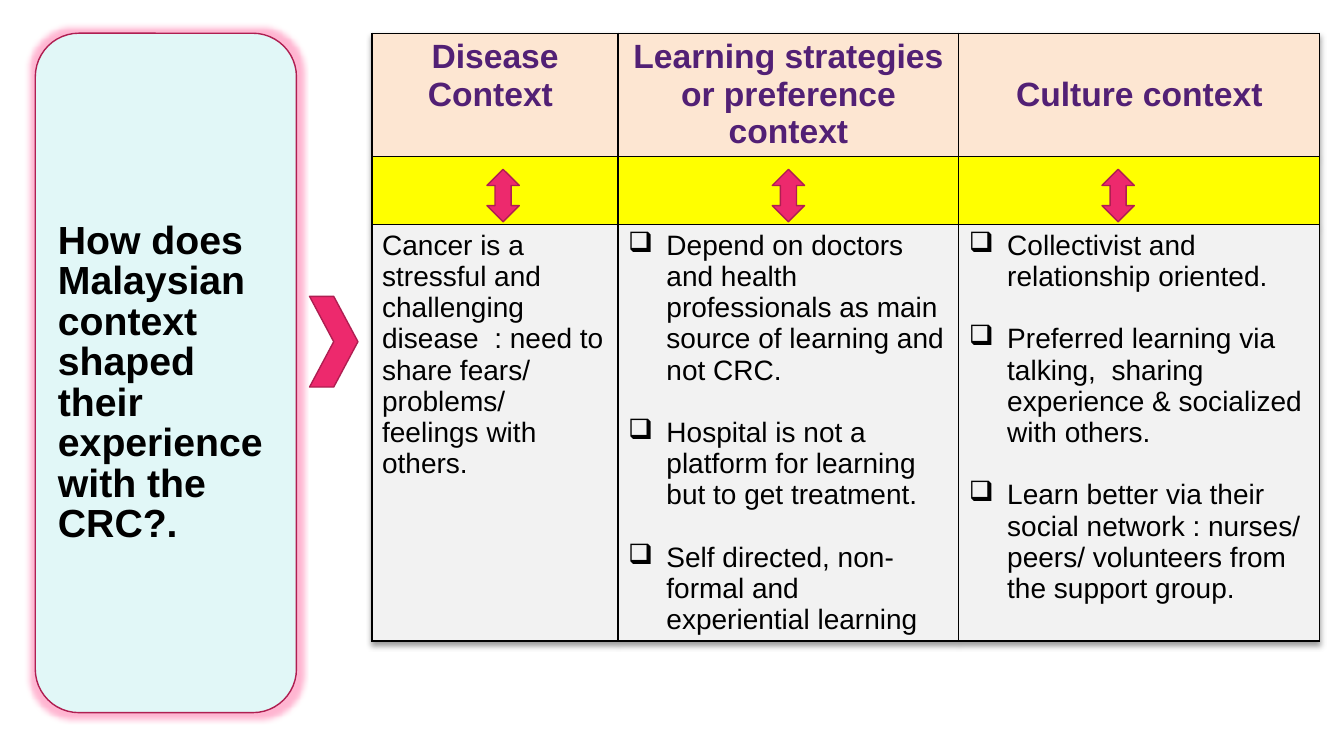
"""Build the slide on how the Malaysian context shaped the CRC experience."""
from lxml.etree import SubElement
from pptx import Presentation
from pptx.dml.color import RGBColor
from pptx.enum.shapes import MSO_SHAPE as Shape
from pptx.enum.text import MSO_ANCHOR as Anchor, PP_ALIGN as Align
from pptx.oxml import parse_xml
from pptx.oxml.ns import nsdecls, qn
from pptx.util import Pt

PX = 9144
FONT = "Arial"
PINK, ROSE, BLACK = "ED296D", "AF1E51", "000000"
ASK = "How does Malaysian context shaped their experience with the CRC?."
HEADS = ["Disease Context ", "Learning strategies or preference context",
         "Culture context"]
NOTES = [
    ["Cancer is a stressful and challenging disease  : need to share fears/ "
     "problems/ feelings with others."],
    ["Depend on doctors and health professionals as main source of learning "
     "and not CRC.",
     "Hospital is not a platform for learning but to get treatment.",
     "Self directed, non-formal and experiential learning"],
    ["Collectivist and relationship oriented.",
     "Preferred learning via talking,  sharing experience & socialized with "
     "others.",
     "Learn better via their social network : nurses/ peers/ volunteers from "
     "the support group."],
]
WIDTHS = [244, 338, 358]
ROWS = [122, 68, 413]


def px(*nums):
    """Turn px lengths into EMU."""
    return [num * PX for num in nums]


def rgb(code):
    """Turn a hex string into a colour."""
    return RGBColor.from_string(code)


def style(para, size, color, bold):
    """Format all runs of a paragraph."""
    for run in para.runs:
        font = run.font
        font.name, font.size, font.bold = FONT, Pt(size), bold
        font.color.rgb = rgb(color)


def effect(parent, kind, color, alpha, **attrs):
    """Add one effect with a half-clear colour to a parent element."""
    effects = parent.find(qn("a:effectLst"))
    if effects is None:
        effects = parse_xml(f"<a:effectLst {nsdecls('a')}/>")
        parent.append(effects)
    item = SubElement(effects, qn(f"a:{kind}"), attrs)
    tint = SubElement(item, qn("a:srgbClr"), val=color)
    SubElement(tint, qn("a:alpha"), val=str(alpha * 1000))


def add_box(slide, kind, place, fill):
    """Draw a filled preset shape with a rose outline."""
    box = slide.shapes.add_shape(kind, *px(*place))
    box.shadow.inherit = False
    box.fill.solid()
    box.fill.fore_color.rgb = rgb(fill)
    box.line.color.rgb = rgb(ROSE)
    box.line.width = Pt(1)
    return box


def add_ask(slide):
    """Draw the glowing question panel."""
    box = add_box(slide, Shape.ROUNDED_RECTANGLE, (35, 33, 259, 674), "E1F7F7")
    effect(box.fill._xPr, "glow", "FF5C9A", 45, rad="101600")
    frame = box.text_frame
    frame.word_wrap = True
    frame.vertical_anchor = Anchor.MIDDLE
    frame.margin_top = 27 * PX
    frame.text = ASK
    para = frame.paragraphs[0]
    para.alignment = Align.LEFT
    para.line_spacing = 0.86
    style(para, 28, BLACK, True)


def paint(cell, fill):
    """Fill a cell and give it thin black borders."""
    cell.fill.solid()
    cell.fill.fore_color.rgb = rgb(fill)
    props = cell._tc.get_or_add_tcPr()
    for spot, side in enumerate(("lnL", "lnR", "lnT", "lnB")):
        props.insert(spot, parse_xml(
            f'<a:{side} {nsdecls("a")} w="12700"><a:solidFill>'
            f'<a:srgbClr val="{BLACK}"/></a:solidFill></a:{side}>'))


def bullet(para):
    """Give a paragraph a hanging box bullet."""
    props = para._p.get_or_add_pPr()
    props.set("marL", str(38 * PX))
    props.set("indent", str(-38 * PX))
    SubElement(props, qn("a:buChar"), char="❑")


def fill_notes(cell, notes):
    """Write notes into a cell, with bullets if there are several."""
    frame = cell.text_frame
    frame.text = "\n".join(notes)
    for spot, para in enumerate(frame.paragraphs):
        if spot:
            para.space_before = Pt(22.3)
        if len(notes) > 1:
            bullet(para)
        style(para, 20, BLACK, False)


def add_grid(slide):
    """Draw the table of three contexts."""
    frame = slide.shapes.add_table(
        len(ROWS), len(WIDTHS), *px(369, 33, sum(WIDTHS), sum(ROWS)))
    table = frame.table
    table.first_row = table.horz_banding = False
    props = table._tbl.tblPr
    effect(props, "outerShdw", BLACK, 40, blurRad="50800", dist="38100",
           dir="5400000")
    props.insert(0, props.find(qn("a:effectLst")))
    for row, high in zip(table.rows, ROWS):
        row.height = high * PX
    for spot, (wide, head, notes) in enumerate(zip(WIDTHS, HEADS, NOTES)):
        table.columns[spot].width = wide * PX
        top, gap, low = (table.cell(row, spot) for row in range(len(ROWS)))
        top.text_frame.text = head
        top.vertical_anchor = Anchor.MIDDLE if spot else Anchor.TOP
        para = top.text_frame.paragraphs[0]
        para.alignment = Align.CENTER
        style(para, 24, "522075", True)
        fill_notes(low, notes)
        for cell, fill in ((top, "FDE6D2"), (gap, "FFFF00"), (low, "F2F2F2")):
            paint(cell, fill)


def main():
    """Build and save the deck."""
    deck = Presentation()
    deck.slide_width, deck.slide_height = px(1333, 750)
    slide = deck.slides.add_slide(deck.slide_layouts[6])
    add_ask(slide)
    add_grid(slide)
    add_box(slide, Shape.CHEVRON, (307, 294, 48, 90), PINK)
    for left in (483, 766, 1093):
        add_box(slide, Shape.UP_DOWN_ARROW, (left, 168, 32, 52), PINK)
    deck.save("out.pptx")


if __name__ == "__main__":
    main()
